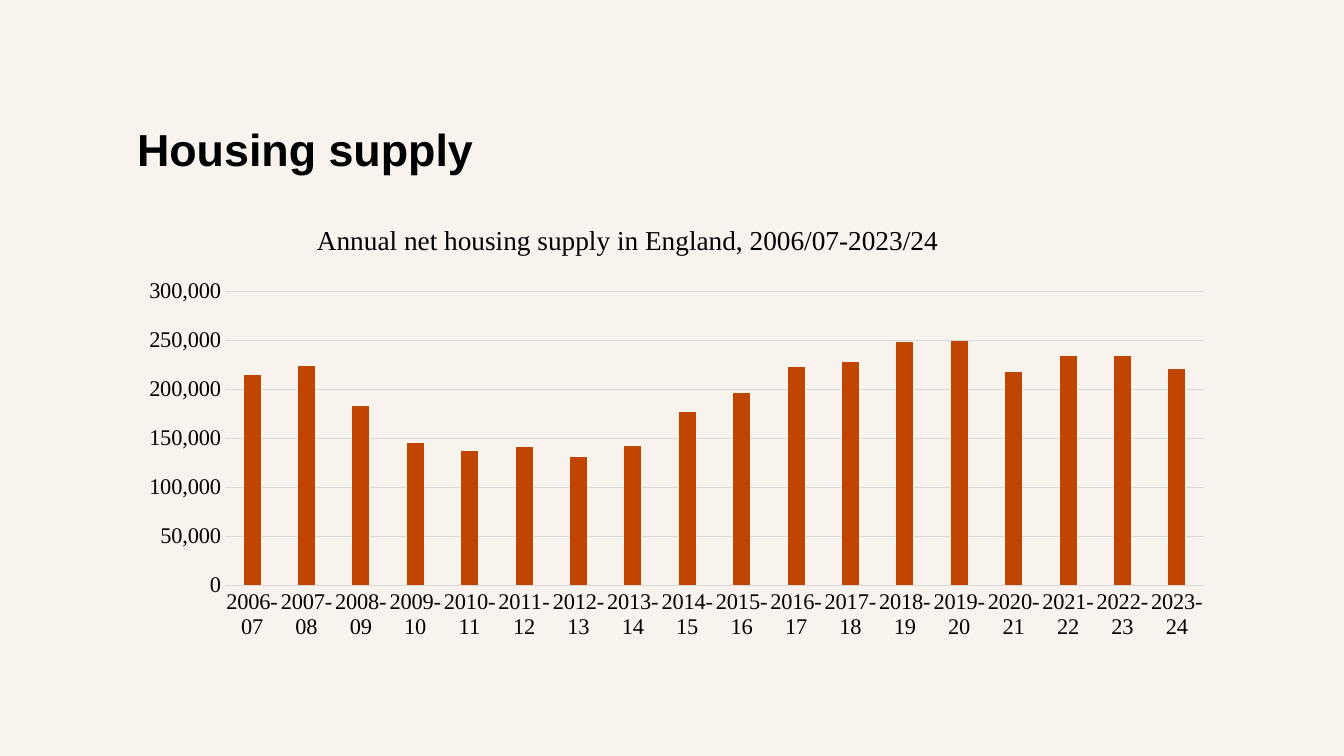
from lxml import etree
from pptx import Presentation
from pptx.chart.data import CategoryChartData
from pptx.dml.color import RGBColor
from pptx.enum.chart import XL_CHART_TYPE as ChartType, XL_TICK_MARK as TickMark
from pptx.enum.text import MSO_ANCHOR as Anchor, PP_ALIGN as Align
from pptx.oxml import parse_xml
from pptx.oxml.ns import nsdecls
from pptx.util import Emu, Pt

COLORS = {"background": "F9F3ED", "text": "000000", "bar": "C04500", "grid": "D9D9D9"}
SUPPLY = [215000, 224000, 183000, 145000, 137000, 141000, 131000, 142000, 177000,
          196000, 223000, 228000, 248000, 249000, 218000, 234000, 234000, 221000]
FIRST_YEAR = 2006


def px(length):
    return Emu(round(length * 914400 / 100.8))


def set_layout(parent, position, **places):
    """Give a chart part a manual layout, in fractions of the chart."""
    for old in parent.findall("{*}layout"):
        parent.remove(old)
    items = "".join(f'<c:{name} val="{value}"/>' for name, value in places.items())
    parent.insert(position, parse_xml(
        f'<c:layout {nsdecls("c")}><c:manualLayout>{items}</c:manualLayout></c:layout>'))


deck = Presentation()
deck.slide_width, deck.slide_height = px(1344), px(756)
page = deck.slides.add_slide(deck.slide_layouts[5])
page.background.fill.solid()
page.background.fill.fore_color.rgb = RGBColor.from_string(COLORS["background"])

# Heading
heading = page.shapes.title
heading.left, heading.top, heading.width, heading.height = px(127), px(116), px(1088), px(60)
frame = heading.text_frame
frame.text = "Housing supply"
frame.vertical_anchor = Anchor.BOTTOM
frame.margin_top = frame.margin_bottom = 0
para = frame.paragraphs[0]
para.alignment = Align.LEFT
font = para.runs[0].font
font.name, font.size, font.bold = "Arial", Pt(32), True
font.color.rgb = RGBColor.from_string(COLORS["text"])

# Column chart
data = CategoryChartData(number_format="#,##0")
data.categories = [f"{year}-{(year + 1) % 100:02}"
                   for year in range(FIRST_YEAR, FIRST_YEAR + len(SUPPLY))]
data.add_series("Series 1", SUPPLY)
chart = page.shapes.add_chart(ChartType.COLUMN_CLUSTERED, px(127), px(193),
                              px(1088), px(498), data).chart
chart.has_legend = False
chart.font.name, chart.font.size = "Times New Roman", Pt(16)
chart.font.color.rgb = RGBColor.from_string(COLORS["text"])

plot = chart.plots[0]
plot.vary_by_categories = False
plot.gap_width, plot.overlap = 219, -27
bars = plot.series[0].format.fill
bars.solid()
bars.fore_color.rgb = RGBColor.from_string(COLORS["bar"])

values, years = chart.value_axis, chart.category_axis
for axis in (values, years):
    axis.major_tick_mark = axis.minor_tick_mark = TickMark.NONE
values.minimum_scale, values.maximum_scale, values.major_unit = 0, 300000, 50000
values.tick_labels.number_format = "#,##0"
values.tick_labels.number_format_is_linked = False
values.format.line.fill.background()
for line in (values.major_gridlines.format.line, years.format.line):
    line.width = Pt(0.75)
    line.color.rgb = RGBColor.from_string(COLORS["grid"])

# Chart title
chart.has_title = True
title = chart.chart_title
title.include_in_layout = False
title.text_frame.text = "Annual net housing supply in England, 2006/07-2023/24"
font = title.text_frame.paragraphs[0].runs[0].font
font.name, font.size, font.bold = "Times New Roman", Pt(19.5), False
font.color.rgb = RGBColor.from_string(COLORS["text"])

set_layout(title._element, 1, xMode="edge", yMode="edge", x=0.17, y=0.05)
set_layout(chart._chartSpace.chart.plotArea, 0, layoutTarget="inner", xMode="edge",
           yMode="edge", x=0.09, y=0.198, w=0.9, h=0.59)

deck.save("out.pptx")
